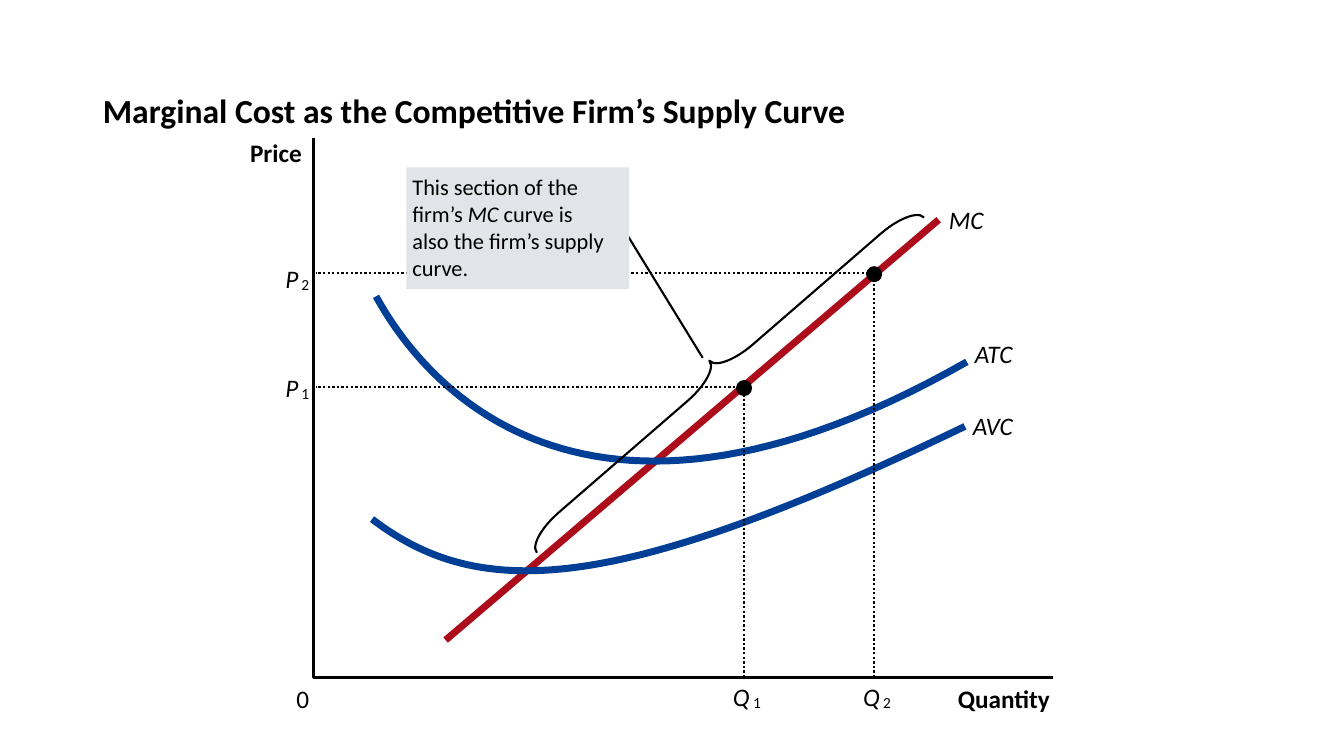
from dataclasses import dataclass

from pptx import Presentation
from pptx.dml.color import RGBColor
from pptx.enum import dml, shapes, text
from pptx.oxml import xmlchemy
from pptx.util import Inches, Pt


@dataclass(frozen=True)
class Theme:
    font: str = "Calibri"
    ink: str = "000000"
    marginal: str = "AD0D1B"
    average: str = "003F95"
    panel: str = "E1E5E9"
    title_size: float = 24
    label_size: float = 18
    note_size: float = 16
    subscript_size: float = 11
    curve_width: float = 5
    axis_width: float = 1.63
    pointer_width: float = 1.5


@dataclass(frozen=True)
class Box:
    left: float
    top: float
    width: float
    height: float

    def at(self, quantity, price):
        """Slide position, in inches, of a point measured from the axes' origin."""
        return self.left + quantity, self.top + self.height - price


THEME = Theme()


def format_font(font, size, bold=False, italic=False):
    font.name = THEME.font
    font.size = Pt(size)
    font.bold = bold
    font.italic = italic
    font.color.rgb = RGBColor.from_string(THEME.ink)


def format_line(line, color, width):
    line.color.rgb = RGBColor.from_string(color)
    line.width = Pt(width)


def add_text(slide, lines, left, top, width, height=0.3, size=THEME.label_size,
             bold=False, italic=False):
    """Each line is a paragraph; a line given as a list has (text, italic) runs."""
    frame = slide.shapes.add_textbox(*map(Inches, (left, top, width, height))).text_frame
    frame.margin_left = frame.margin_right = frame.margin_top = frame.margin_bottom = 0
    frame.word_wrap = False
    frame.auto_size = text.MSO_AUTO_SIZE.SHAPE_TO_FIT_TEXT
    for index, line in enumerate(lines):
        paragraph = frame.paragraphs[0] if index == 0 else frame.add_paragraph()
        for words, slanted in [(line, italic)] if isinstance(line, str) else line:
            run = paragraph.add_run()
            run.text = words
            format_font(run.font, size, bold, slanted)


def add_solid(slide, kind, left, top, width, height, color):
    shape = slide.shapes.add_shape(kind, *map(Inches, (left, top, width, height)))
    shape.shadow.inherit = False
    shape.fill.solid()
    shape.fill.fore_color.rgb = RGBColor.from_string(color)
    shape.line.fill.background()


def add_path(slide, points, color, width):
    start, *rest = [tuple(map(Inches, point)) for point in points]
    builder = slide.shapes.build_freeform(*start)
    builder.add_line_segments(rest, close=False)
    shape = builder.convert_to_shape()
    shape.shadow.inherit = False
    shape.fill.background()
    format_line(shape.line, color, width)
    return shape


def add_segment(slide, start, end, color, width):
    connector = slide.shapes.add_connector(
        shapes.MSO_CONNECTOR.STRAIGHT, *map(Inches, (*start, *end)))
    format_line(connector.line, color, width)
    effects = xmlchemy.OxmlElement("a:effectLst")
    connector._element.spPr.append(effects)


def bezier(controls, steps=60):
    """Points along the cubic curve with the four given control points."""
    weights = (1, 3, 3, 1)
    return [tuple(sum(weight * (1 - t) ** (3 - k) * t ** k * control[axis]
                      for k, (weight, control) in enumerate(zip(weights, controls)))
                  for axis in (0, 1))
            for t in (step / steps for step in range(steps + 1))]


def add_title(slide, words, box):
    title = slide.shapes.title
    title.left, title.top, title.width, title.height = map(
        Inches, (box.left, box.top, box.width, box.height))
    frame = title.text_frame
    frame.text = words
    frame.vertical_anchor = text.MSO_ANCHOR.MIDDLE
    paragraph = frame.paragraphs[0]
    paragraph.alignment = text.PP_ALIGN.LEFT
    paragraph.line_spacing = 0.8
    format_font(paragraph.runs[0].font, THEME.title_size, bold=True)


def add_axes(slide, box):
    right, bottom = box.left + box.width, box.top + box.height
    corners = [(box.left, box.top), (box.left, bottom), (right, bottom)]
    add_path(slide, corners, THEME.ink, THEME.axis_width)
    add_text(slide, ["Quantity"], right - 0.94, bottom + 0.06, 0.92, bold=True)
    add_text(slide, ["0"], box.left - 0.17, bottom + 0.06, 0.13)
    add_text(slide, ["Price"], box.left - 0.63, box.top - 0.01, 0.52, bold=True)


def add_cost_curves(slide, box):
    start, end = box.at(1.31, 0.37), box.at(6.2, 4.54)
    add_segment(slide, start, end, THEME.marginal, THEME.curve_width)
    add_text(slide, ["MC"], end[0] + 0.1, end[1] - 0.15, 0.35, italic=True)
    average_curves = [
        ("ATC", [(0.62, 3.78), (0.96, 3.16), (2.48, 0.85), (6.48, 3.13)], 0.38, 0.23),
        ("AVC", [(0.58, 1.57), (1.64, 0.76), (2.97, 0.8), (6.46, 2.49)], 0.4, 0.16),
    ]
    for name, controls, width, rise in average_curves:
        points = bezier([box.at(*control) for control in controls])
        add_path(slide, points, THEME.average, THEME.curve_width)
        x, y = points[-1]
        add_text(slide, [name], x + 0.08, y - rise, width, italic=True)


def add_supply_point(slide, box, number, quantity, price, label_rise):
    """Dot on the MC curve with dotted guides to both axes and their labels."""
    x, y = box.at(quantity, price)
    bottom = box.top + box.height
    dot = 0.16
    add_solid(slide, shapes.MSO_SHAPE.OVAL, x - dot / 2, y + 0.01 - dot / 2, dot, dot,
              THEME.ink)
    guides = add_path(slide, [(x, bottom), (x, y), (box.left + 0.02, y)],
                      THEME.ink, THEME.axis_width)
    guides.line.dash_style = dml.MSO_LINE.ROUND_DOT
    labels = [("P", box.left - 0.28, y - label_rise, 0.13),
              ("Q", x - 0.11, bottom + 0.04, 0.17)]
    for letter, left, top, width in labels:
        add_text(slide, [letter], left, top, width, italic=True)
        add_text(slide, [number], left + width + 0.03, top + 0.12, 0.08, 0.19,
                 size=THEME.subscript_size)


def add_supply_note(slide, box):
    """Shaded note, its pointer, and the brace along the MC curve."""
    right = box.left + box.width
    add_segment(slide, (right + 0.73, box.top + 1.89), (right - 0.05, box.top + 0.62),
                THEME.ink, THEME.pointer_width)
    add_solid(slide, shapes.MSO_SHAPE.RECTANGLE,
              box.left, box.top, box.width, box.height, THEME.panel)
    lines = ["This section of the",
             [("firm’s ", False), ("MC", True), (" curve is", False)],
             "also the firm’s supply", "curve."]
    add_text(slide, lines, box.left + 0.06, box.top + 0.06, 1.92, 1.08,
             size=THEME.note_size)
    brace = slide.shapes.add_shape(
        shapes.MSO_SHAPE.LEFT_BRACE,
        *map(Inches, (right + 0.74, box.top - 0.5, 0.32, 5.08)))
    brace.rotation = 49.1
    brace.adjustments[0] = 1.34
    brace.shadow.inherit = False
    brace.fill.background()
    format_line(brace.line, THEME.ink, THEME.pointer_width)


def main():
    presentation = Presentation()
    presentation.slide_width, presentation.slide_height = Inches(13.33), Inches(7.5)
    slide = presentation.slides.add_slide(presentation.slide_layouts[5])
    plot = Box(3.11, 1.37, 7.33, 5.35)
    add_title(slide, "Marginal Cost as the Competitive Firm’s Supply Curve",
              Box(0.92, 0.4, 11.5, 1.45))
    add_axes(slide, plot)
    add_cost_curves(slide, plot)
    add_supply_point(slide, plot, "1", 4.27, 2.88, 0.15)
    add_supply_point(slide, plot, "2", 5.56, 4.01, 0.1)
    add_supply_note(slide, Box(4.03, 1.66, 2.21, 1.21))
    presentation.save("out.pptx")


if __name__ == "__main__":
    main()
